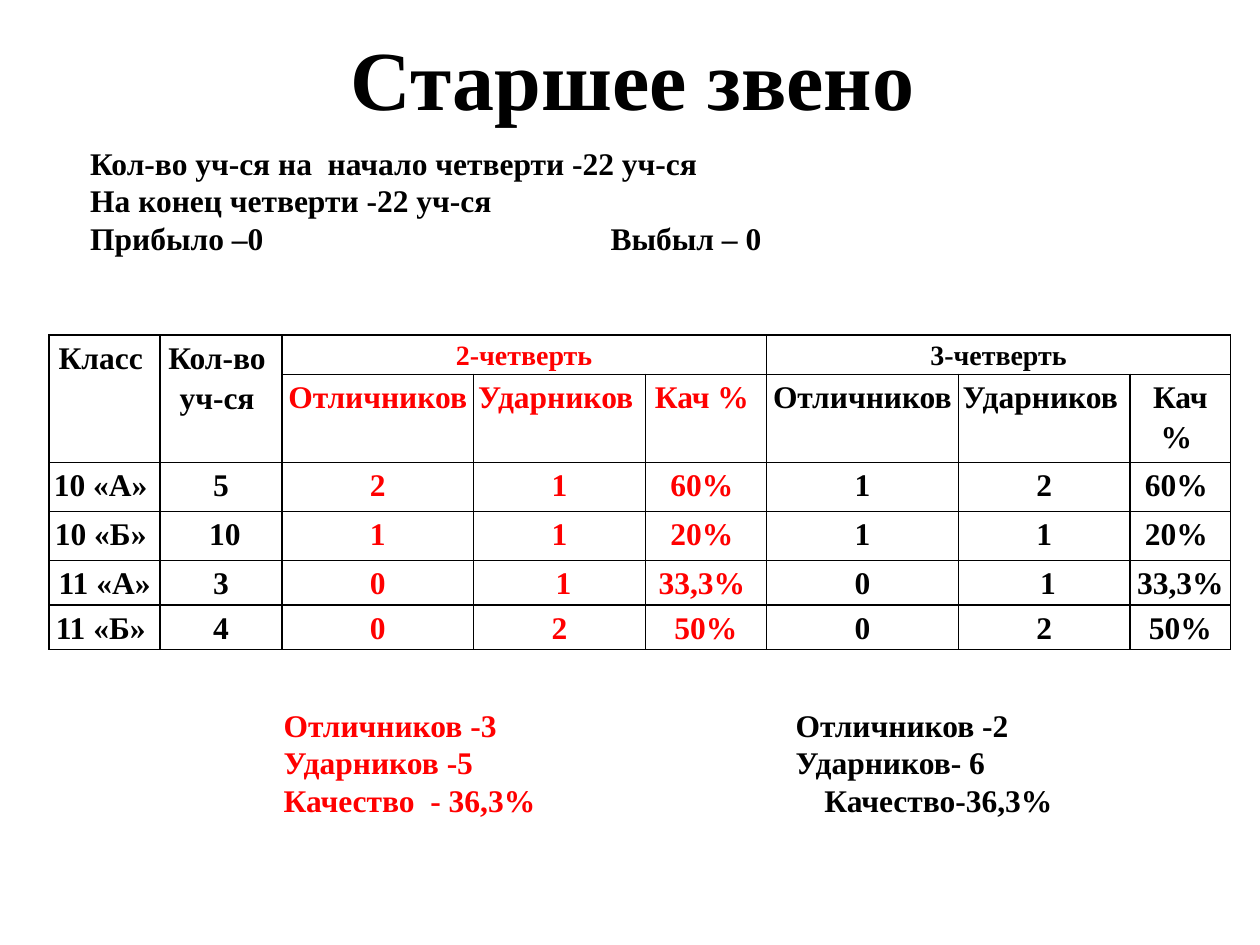
from lxml.etree import SubElement
from pptx import Presentation
from pptx.dml.color import RGBColor
from pptx.enum.text import MSO_AUTO_SIZE as AutoSize, PP_ALIGN as Align
from pptx.oxml.ns import qn
from pptx.util import Cm, Pt

BLACK = RGBColor(0, 0, 0)
RED = RGBColor(255, 0, 0)

COLUMNS = [2.24, 2.45, 3.87, 3.46, 2.44, 3.87, 3.46, 2.03]
ROWS = [0.64, 1.19, 0.99, 0.99, 0.69, 0.69]
MERGES = [(0, 0, 1, 0), (0, 1, 1, 1), (0, 2, 0, 4), (0, 5, 0, 7)]
SECOND_QUARTER = range(2, 5)
MEASURES = ["Отличников ", "Ударников ", "Кач % "]
GRADES = [
    ["Класс ", "Кол-во \nуч-ся ", "2-четверть", "", "", "3-четверть", "", ""],
    ["", "", *MEASURES, *MEASURES],
    ["10 «А» ", "5", "2", "1", "60% ", "1", "2", "60% "],
    ["10 «Б» ", " 10", "1", "1", "20% ", "1", "1", "20% "],
    ["11 «А»", "3", "0", " 1", "33,3% ", "0", " 1", "33,3% "],
    ["11 «Б» ", "4", "0", "2", "50%", "0", "2", "50%"],
]
PUPILS = [
    ([("Кол-во уч-ся на  начало четверти -22 уч-ся", BLACK)], []),
    ([("На конец четверти -22 уч-ся", BLACK)], []),
    ([("Прибыло –0", BLACK), ("\tВыбыл – 0", BLACK)], [10.49]),
]
TOTALS = [
    ([("\tОтличников -3", RED), ("\tОтличников -2", BLACK)], [2.7, 13.02]),
    ([("\tУдарников -5", RED), ("\tУдарников- 6", BLACK)], [2.7, 13.02]),
    ([("\tКачество  - 36,3%", RED), ("\tКачество-36,3%", BLACK)], [2.7, 13.6]),
]


class Deck:
    font = "Times New Roman"
    size = 18

    def __init__(self, prs):
        self.slide = prs.slides.add_slide(prs.slide_layouts[6])

    def run(self, p, text, color=BLACK, size=size):
        r = p.add_run()
        r.text = text
        r.font.name = self.font
        r.font.size = Pt(size)
        r.font.bold = True
        r.font.color.rgb = color

    def tabs(self, p, stops):
        tab_list = SubElement(p._p.get_or_add_pPr(), qn("a:tabLst"))
        for stop in stops:
            SubElement(tab_list, qn("a:tab"), pos=str(int(Cm(stop))), algn="l")

    def text(self, x, y, w, h, lines, size=size, align=Align.LEFT, wrap=True):
        sp = self.slide.shapes.add_textbox(Cm(x), Cm(y), Cm(w), Cm(h))
        tf = sp.text_frame
        tf.word_wrap = wrap
        tf.auto_size = AutoSize.SHAPE_TO_FIT_TEXT
        for i, (runs, stops) in enumerate(lines):
            p = tf.add_paragraph() if i else tf.paragraphs[0]
            p.alignment = align
            if stops:
                self.tabs(p, stops)
            for text, color in runs:
                self.run(p, text, color, size)

    def borders(self, cell):
        tc_pr = cell._tc.get_or_add_tcPr()
        for side in ("lnL", "lnR", "lnT", "lnB"):
            ln = SubElement(tc_pr, qn(f"a:{side}"), w=str(int(Pt(1))))
            fill = SubElement(ln, qn("a:solidFill"))
            SubElement(fill, qn("a:srgbClr"), val=str(BLACK))

    def cell(self, cell, text, color, size):
        cell.margin_left = cell.margin_right = Cm(0.08)
        cell.margin_top, cell.margin_bottom = Cm(0.02), Cm(0)
        self.borders(cell)
        cell.fill.background()
        tf = cell.text_frame
        for i, line in enumerate(text.split("\n") if text else []):
            p = tf.add_paragraph() if i else tf.paragraphs[0]
            p.alignment = Align.CENTER
            p.line_spacing = 1.15
            self.run(p, line, color, size)

    def table(self, x, y, columns, rows, data, merges):
        table = self.slide.shapes.add_table(
            len(rows), len(columns), Cm(x), Cm(y), Cm(sum(columns)), Cm(sum(rows))
        ).table
        table.first_row = table.horz_banding = False
        for column, width in zip(table.columns, columns):
            column.width = Cm(width)
        for row, height in zip(table.rows, rows):
            row.height = Cm(height)
        for top, left, bottom, right in merges:
            table.cell(top, left).merge(table.cell(bottom, right))
        for i, values in enumerate(data):
            for j, value in enumerate(values):
                color = RED if j in SECOND_QUARTER else BLACK
                size = 16 if value.endswith("четверть") else self.size
                self.cell(table.cell(i, j), value, color, size)


def main():
    prs = Presentation()
    prs.slide_width, prs.slide_height = Cm(25.4), Cm(19.05)
    deck = Deck(prs)
    title = [([("Старшее звено", BLACK)], [])]
    deck.text(6.76, 0.41, 11.99, 2.31, title, 48, Align.CENTER, False)
    deck.text(1.57, 2.77, 20.04, 3.33, PUPILS)
    deck.table(0.99, 6.75, COLUMNS, ROWS, GRADES, MERGES)
    deck.text(2.77, 14.1, 21.44, 3.33, TOTALS)
    prs.save("out.pptx")


if __name__ == "__main__":
    main()
